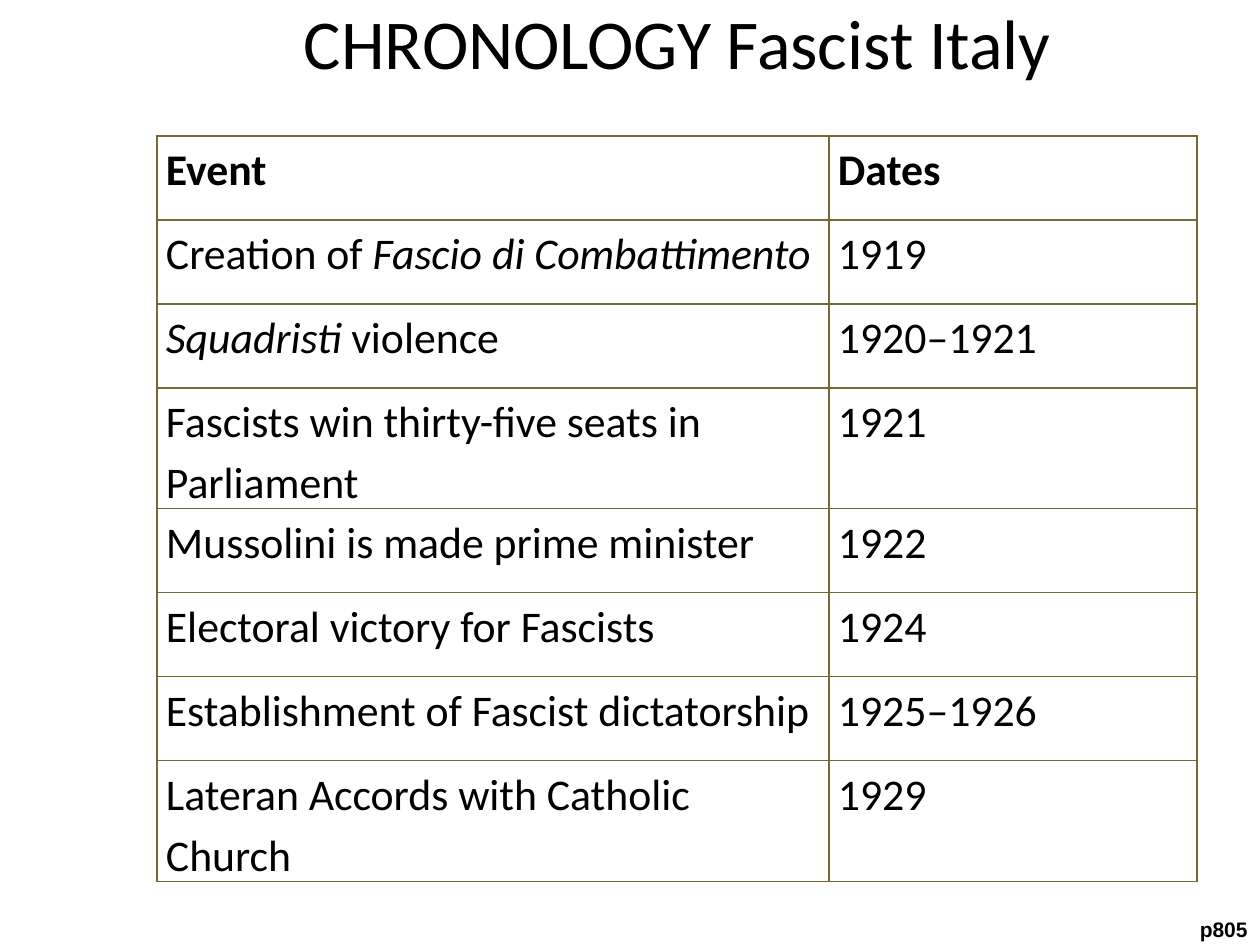
"""Build the Fascist Italy chronology slide."""
from lxml.etree import SubElement
from pptx import Presentation
from pptx.dml.color import RGBColor
from pptx.enum.text import MSO_ANCHOR, PP_ALIGN
from pptx.oxml.ns import qn
from pptx.util import Pt

PX = 914400 // 126
COLORS = {"text": "000000", "border": "746833"}
SLIDE_SIZE = (1260, 945)

TITLE = "CHRONOLOGY Fascist Italy"
PAGE_LABEL = "p805"
ROWS = [
    ([("Event", "bold")], [("Dates", "bold")]),
    ([("Creation of ", "plain"), ("Fascio di Combattimento", "italic")], [("1919", "plain")]),
    ([("Squadristi", "italic"), (" violence", "plain")], [("1920–1921", "plain")]),
    ([("Fascists win thirty-five seats in Parliament", "plain")], [("1921", "plain")]),
    ([("Mussolini is made prime minister", "plain")], [("1922", "plain")]),
    ([("Electoral victory for Fascists", "plain")], [("1924", "plain")]),
    ([("Establishment of Fascist dictatorship", "plain")], [("1925–1926", "plain")]),
    ([("Lateran Accords with Catholic Church", "plain")], [("1929", "plain")]),
]

TITLE_AREA = (95, 10, 1165, 63)
LABEL_AREA = (1181, 910, 79, 38)
TABLE_ORIGIN = (157, 136)
COLUMN_WIDTHS = (672, 368)
ROW_HEIGHT = 84
CELL_MARGINS = {"margin_left": 9, "margin_right": 9, "margin_top": 0, "margin_bottom": 0}

FORMATS = {
    "title": {"name": "Calibri", "size": Pt(40)},
    "label": {"name": "Arial", "size": Pt(12), "bold": True},
    "plain": {"name": "Calibri", "size": Pt(25)},
    "bold": {"name": "Calibri", "size": Pt(25), "bold": True},
    "italic": {"name": "Calibri", "size": Pt(25), "italic": True},
}


def emu(*lengths):
    return [length * PX for length in lengths]


def add_spans(para, spans):
    for text, style in spans:
        span = para.add_run()
        span.text = text
        for attribute, value in FORMATS[style].items():
            setattr(span.font, attribute, value)
        span.font.color.rgb = RGBColor.from_string(COLORS["text"])


def add_text(page, area, text, style, align, anchor):
    frame = page.shapes.add_textbox(*emu(*area)).text_frame
    frame.word_wrap = True
    frame.vertical_anchor = anchor
    para = frame.paragraphs[0]
    para.alignment = align
    add_spans(para, [(text, style)])


def add_borders(cell):
    properties = cell._tc.get_or_add_tcPr()
    for index, side in enumerate(("lnL", "lnR", "lnT", "lnB")):
        line = properties.makeelement(qn(f"a:{side}"), {"w": str(Pt(1))})
        properties.insert(index, line)
        fill = SubElement(line, qn("a:solidFill"))
        SubElement(fill, qn("a:srgbClr"), val=COLORS["border"])


def add_chronology(page):
    size = (sum(COLUMN_WIDTHS), ROW_HEIGHT * len(ROWS))
    frame = page.shapes.add_table(len(ROWS), len(COLUMN_WIDTHS), *emu(*TABLE_ORIGIN, *size))
    table = frame.table
    table.first_row = table.horz_banding = False
    for column, width in zip(table.columns, emu(*COLUMN_WIDTHS)):
        column.width = width
    for row, entries in zip(table.rows, ROWS):
        row.height = ROW_HEIGHT * PX
        for cell, spans in zip(row.cells, entries):
            cell.fill.background()
            for attribute, margin in CELL_MARGINS.items():
                setattr(cell, attribute, margin * PX)
            para = cell.text_frame.paragraphs[0]
            para.line_spacing = 1.15
            add_spans(para, spans)
            add_borders(cell)


def main():
    deck = Presentation()
    deck.slide_width, deck.slide_height = emu(*SLIDE_SIZE)
    page = deck.slides.add_slide(deck.slide_layouts[6])
    add_text(page, TITLE_AREA, TITLE, "title", PP_ALIGN.CENTER, MSO_ANCHOR.MIDDLE)
    add_text(page, LABEL_AREA, PAGE_LABEL, "label", PP_ALIGN.RIGHT, MSO_ANCHOR.TOP)
    add_chronology(page)
    deck.save("out.pptx")


if __name__ == "__main__":
    main()
